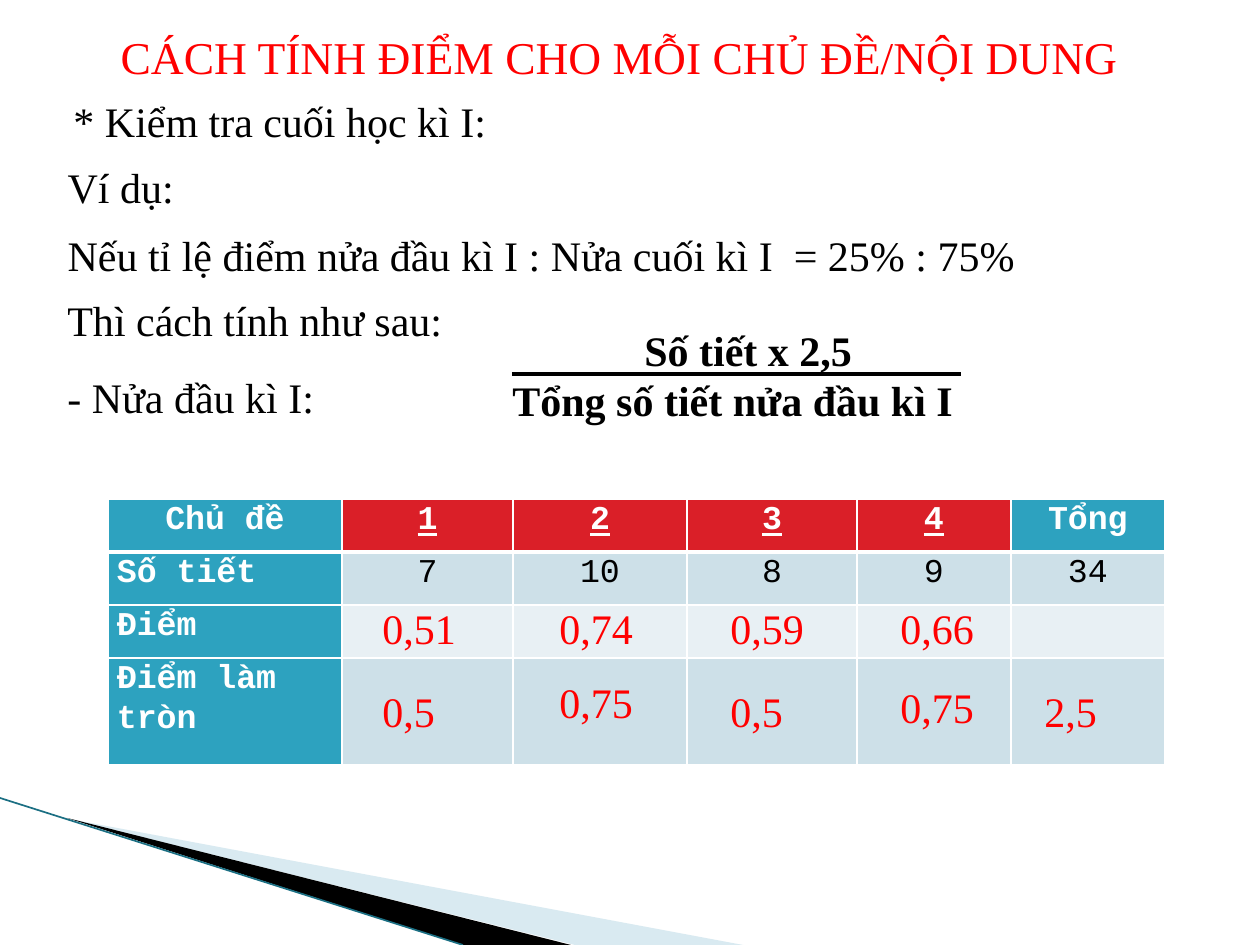
from lxml.etree import SubElement
from pptx import Presentation
from pptx.dml.color import RGBColor
from pptx.enum.shapes import MSO_CONNECTOR
from pptx.enum.text import MSO_ANCHOR, MSO_AUTO_SIZE, PP_ALIGN
from pptx.oxml.ns import qn
from pptx.util import Pt

PX = 914400 / 126  # EMU in one px

RED = RGBColor(0xFF, 0x00, 0x00)
BLACK = RGBColor(0x00, 0x00, 0x00)
WHITE = RGBColor(0xFF, 0xFF, 0xFF)
TEAL = RGBColor(0x2D, 0xA2, 0xBF)
DARK_TEAL = RGBColor(0x1B, 0x6F, 0x83)
CRIMSON = RGBColor(0xDA, 0x1F, 0x28)
PALE_BLUE = RGBColor(0xA0, 0xCB, 0xDC)
BAND_DARK = RGBColor(0xCD, 0xE0, 0xE8)
BAND_LIGHT = RGBColor(0xE8, 0xF0, 0xF4)


def emu(px):
    return round(px * PX)


def write(frame, *lines, font="Times New Roman", size=24, color=BLACK, bold=False,
          underline=False, align=PP_ALIGN.LEFT, spacing=1.0, after=0, indents=()):
    """Fill a text frame, one paragraph for each line."""
    for number, line in enumerate(lines):
        paragraph = frame.paragraphs[0] if number == 0 else frame.add_paragraph()
        properties = paragraph._p.get_or_add_pPr()
        properties.set("marL", str(emu(indents[number]) if indents else 0))
        properties.set("indent", "0")
        SubElement(properties, qn("a:buNone"))
        paragraph.alignment = align
        paragraph.line_spacing = spacing
        paragraph.space_before = Pt(0)
        paragraph.space_after = Pt(after)
        run = paragraph.add_run()
        run.text = line
        run.font.name = font
        run.font.size = Pt(size)
        run.font.color.rgb = color
        run.font.bold = bold
        run.font.underline = underline


class Deck:
    """Holds the style and the current slide."""

    table_font = "Courier New"
    table_size = 19

    def __init__(self, width, height):
        self.show = Presentation()
        self.show.slide_width, self.show.slide_height = emu(width), emu(height)
        self.slide = self.show.slides.add_slide(self.show.slide_layouts[1])

    def place(self, holder, left, top, width, height, *lines, wrap=True, **style):
        holder.left, holder.top = emu(left), emu(top)
        holder.width, holder.height = emu(width), emu(height)
        frame = holder.text_frame
        frame.word_wrap = wrap
        frame.auto_size = MSO_AUTO_SIZE.NONE
        frame.vertical_anchor = MSO_ANCHOR.TOP
        write(frame, *lines, **style)

    def title(self, *place_and_lines, **style):
        self.place(self.slide.shapes.title, *place_and_lines, **style)

    def body(self, *place_and_lines, **style):
        self.place(self.slide.placeholders[1], *place_and_lines, **style)

    def text(self, *place_and_lines, **style):
        box = self.slide.shapes.add_textbox(0, 0, 0, 0)
        self.place(box, *place_and_lines, **style)

    def outline(self, start, *points, color, alpha=None):
        builder = self.slide.shapes.build_freeform(*start, scale=PX)
        builder.add_line_segments(points, close=True)
        wedge = builder.convert_to_shape()
        wedge.shadow.inherit = False
        wedge.fill.solid()
        wedge.fill.fore_color.rgb = color
        wedge.line.fill.background()
        if alpha:
            tint = wedge._element.spPr.find(".//" + qn("a:srgbClr"))
            SubElement(tint, qn("a:alpha"), val=str(alpha * 1000))

    def line(self, x1, y1, x2, y2, color, weight):
        rule = self.slide.shapes.add_connector(
            MSO_CONNECTOR.STRAIGHT, emu(x1), emu(y1), emu(x2), emu(y2))
        rule.line.color.rgb = color
        rule.line.width = Pt(weight)
        SubElement(rule._element.spPr, qn("a:effectLst"))

    def border(self, cell, **weights):
        properties = cell._tc.get_or_add_tcPr()
        for side in "LRTB":
            edge = SubElement(properties, qn(f"a:ln{side}"), w=str(Pt(weights.get(side, 1))))
            fill = SubElement(edge, qn("a:solidFill"))
            SubElement(fill, qn("a:srgbClr"), val=str(WHITE))

    def table(self, left, top, widths, heights, rows):
        table = self.slide.shapes.add_table(
            len(heights), len(widths), emu(left), emu(top),
            emu(sum(widths)), emu(sum(heights))).table
        for column, width in zip(table.columns, widths):
            column.width = emu(width)
        last = len(widths) - 1
        for r, height in enumerate(heights):
            table.rows[r].height = emu(height)
            for c in range(len(widths)):
                cell = table.cell(r, c)
                cell.margin_left = cell.margin_right = emu(9)
                cell.margin_top = cell.margin_bottom = 0
                self.border(cell, **({"B": 3} if r == 0 else {"T": 3} if r == 1 else {}))
                topic = r == 0 and 0 < c < last
                label = r == 0 or c == 0
                cell.fill.solid()
                cell.fill.fore_color.rgb = (
                    CRIMSON if topic else TEAL if label
                    else BAND_DARK if r % 2 else BAND_LIGHT)
                if c < len(rows[r]):
                    write(cell.text_frame, rows[r][c], font=self.table_font,
                          size=self.table_size, color=WHITE if label else BLACK,
                          bold=label, underline=topic, spacing=1.07,
                          align=PP_ALIGN.CENTER if r == 0 or c else PP_ALIGN.LEFT)


def main():
    deck = Deck(1260, 945)

    # Corner decoration
    deck.outline((69, 819), (743, 945), (575, 945), color=PALE_BLUE, alpha=40)
    deck.outline((67, 818), (571, 945), (463, 945), color=BLACK)
    deck.line(0, 798, 463, 945, DARK_TEAL, 0.95)

    # Heading and example
    deck.title(108, 23, 1031, 68, "CÁCH TÍNH ĐIỂM CHO MỖI CHỦ ĐỀ/NỘI DUNG",
               size=26, color=RED, wrap=False)
    deck.text(61, 89, 484, 63, "* Kiểm tra cuối học kì I:", wrap=False)
    deck.body(55, 152, 1137, 136, "Ví dụ:",
              "Nếu tỉ lệ điểm nửa đầu kì I : Nửa cuối kì I  = 25% : 75%",
              spacing=1.07, after=8)
    deck.text(55, 285, 403, 67, "Thì cách tính như sau:", spacing=1.07, wrap=False)
    deck.text(55, 365, 285, 63, "- Nửa đầu kì I:", wrap=False)

    # Formula
    deck.text(500, 318, 488, 115, "Số tiết x 2,5", "Tổng số tiết nửa đầu kì I",
              bold=True, indents=(132, 0))
    deck.line(512, 374, 961, 374, BLACK, 2.25)

    # Scores by topic
    deck.table(108, 499, (234, 171, 174, 170, 154, 154), (53, 53, 53, 107), (
        ("Chủ đề", "1", "2", "3", "4", "Tổng"),
        ("Số tiết", "7", "10", "8", "9", "34"),
        ("Điểm",),
        ("Điểm làm tròn",),
    ))
    scores = (
        (370, "0,51", "0,5", 679),
        (547, "0,74", "0,75", 670),
        (718, "0,59", "0,5", 679),
        (888, "0,66", "0,75", 675),
        (1032, None, "2,5", 679),
    )
    for left, exact, rounded, rounded_top in scores:
        for score, top in ((exact, 596), (rounded, rounded_top)):
            if score:
                width = 100 if len(score) == 4 else 78
                deck.text(left, top, width, 63, score, color=RED, wrap=False)

    deck.show.save("out.pptx")


if __name__ == "__main__":
    main()
